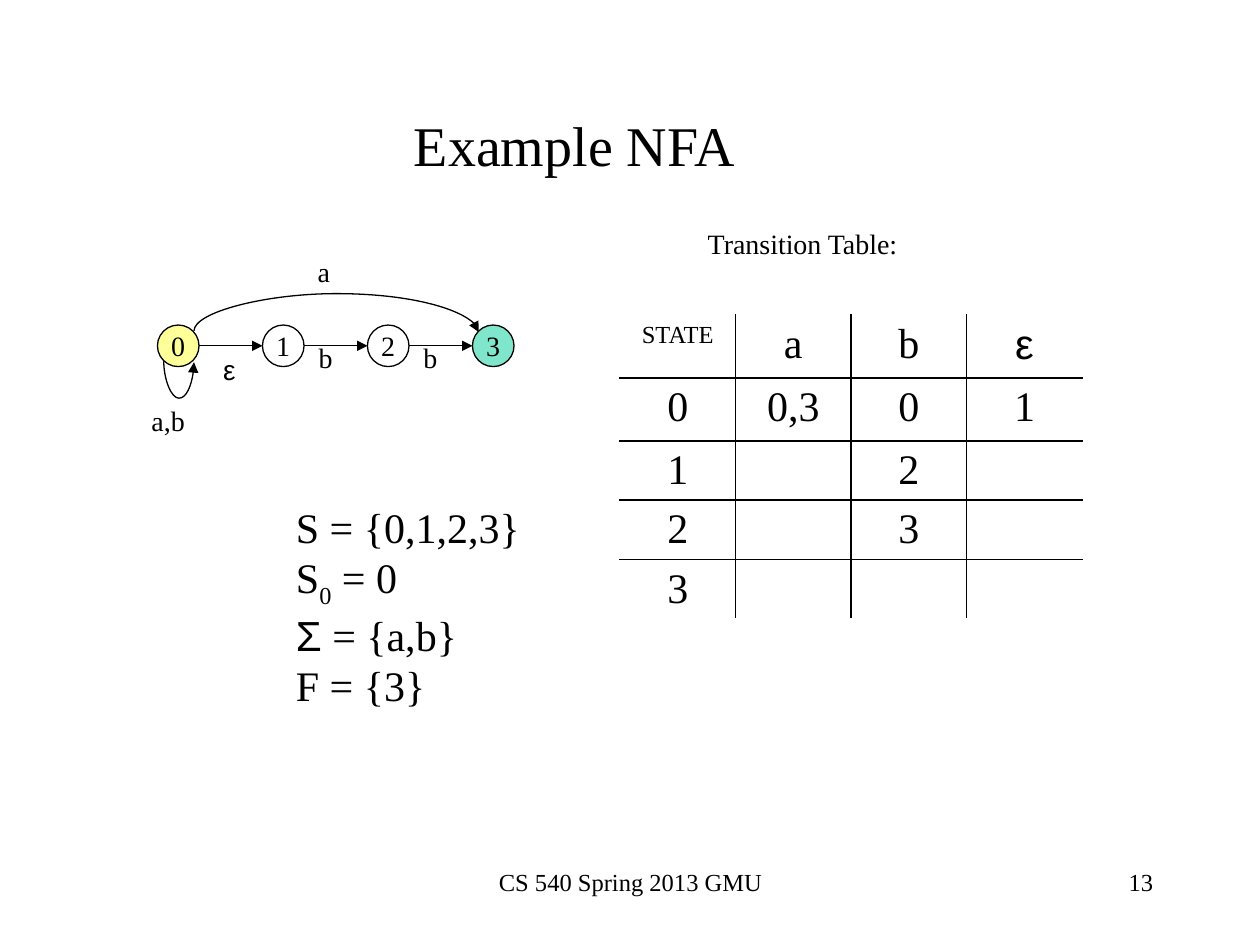
import dataclasses
import typing

import lxml.etree
import pptx
import pptx.dml.color
import pptx.enum.shapes
import pptx.enum.text
import pptx.oxml
import pptx.oxml.ns
import pptx.util

Inches = pptx.util.Inches
Pt = pptx.util.Pt
RGBColor = pptx.dml.color.RGBColor
Align = pptx.enum.text.PP_ALIGN
Anchor = pptx.enum.text.MSO_ANCHOR
Link = pptx.enum.shapes.MSO_CONNECTOR
qn = pptx.oxml.ns.qn

BLACK = RGBColor(0x00, 0x00, 0x00)
WHITE = RGBColor(0xFF, 0xFF, 0xFF)
YELLOW = RGBColor(0xFF, 0xFF, 0x99)
GREEN = RGBColor(0x00, 0xCC, 0x99)
SERIF, SANS = "Times New Roman", "Arial"
GREEK = "εΣ"

# State circles: first left edge, top, size and step
LEFT, TOP, SIZE, STEP = 1.25, 2.58, 0.33, 2.5 / 3


@dataclasses.dataclass
class Label:
    text: str
    left: float
    top: float
    width: float
    height: float = 0.37
    size: int = 16
    align: typing.Any = Align.CENTER
    wrap: bool = False


@dataclasses.dataclass
class Arc:
    start: int
    start_site: int
    end: int
    end_site: int
    mid: float
    y: float
    span: float
    turn: int
    flip: str
    bend: int


LABELS = [
    Label("CS 540 Spring 2013 GMU", 3.42, 6.83, 3.17, 0.5, 14, wrap=True),
    Label("13", 7.17, 6.83, 2.08, 0.5, 14, Align.RIGHT, True),
    Label("Transition Table:", 5.5, 1.75, 1.74),
    Label("a,b", 1.1, 3.15, 0.47),
    Label("a", 2.42, 1.97, 0.3),
    Label("b", 2.43, 2.65, 0.31),
    Label("b", 3.26, 2.65, 0.31),
    Label("ε", 1.67, 2.75, 0.3),
    Label("Example NFA", 3.17, 0.83, 2.78, 0.63, 32),
]
# Loop on state 0, and the arc from 0 to 3
ARCS = [
    Arc(0, 3, 0, 5, 1.42, 2.87, 0.24, 270, "flipH", 30),
    Arc(0, 7, 3, 1, 2.67, 2.63, 2.26, 90, "flipV", -30),
]
ROWS = [
    ["STATE", "a", "b", "ε"],
    ["0", "0,3", "0", "1"],
    ["1", "", "2", ""],
    ["2", "", "3", ""],
    ["3", "", "", ""],
]
HEIGHTS = [0.5, 0.5, 0.47, 0.47, 0.47]


def style(run, size: int) -> None:
    run.font.size = Pt(size)
    run.font.name = SANS if run.text in GREEK else SERIF
    run.font.color.rgb = BLACK


def write(frame, text: str, size: int, align) -> None:
    frame.text = text
    for para in frame.paragraphs:
        para.alignment = align
        for run in para.runs:
            style(run, size)


def add_label(shapes, label: Label) -> None:
    box = shapes.add_textbox(Inches(label.left), Inches(label.top),
                             Inches(label.width), Inches(label.height))
    box.text_frame.word_wrap = label.wrap
    write(box.text_frame, label.text, label.size, label.align)


def add_state(shapes, num: int, fill: RGBColor):
    oval = shapes.add_shape(pptx.enum.shapes.MSO_SHAPE.OVAL,
                            Inches(LEFT + num * STEP), Inches(TOP),
                            Inches(SIZE), Inches(SIZE))
    oval.shadow.inherit = False
    oval.fill.solid()
    oval.fill.fore_color.rgb = fill
    oval.line.color.rgb = BLACK
    oval.line.width = Pt(0.75)
    oval.text_frame.word_wrap = False
    oval.text_frame.vertical_anchor = Anchor.MIDDLE
    write(oval.text_frame, str(num), 16, Align.CENTER)
    return oval


def add_arrow(shapes, kind, start, start_site: int, end, end_site: int):
    line = shapes.add_connector(kind, 0, 0, 0, 0)
    line.begin_connect(start, 0)
    line.end_connect(end, 0)
    # An oval has eight sites, counted from the top by way of the left
    for tag, site in (("a:stCxn", start_site), ("a:endCxn", end_site)):
        for joint in line._element.iter(qn(tag)):
            joint.set("idx", str(site))
    line.begin_x, line.end_x = start.left + start.width, end.left
    line.begin_y = line.end_y = start.top + start.height // 2
    line.line.color.rgb = BLACK
    line.line.width = Pt(0.75)
    props = line._element.spPr
    lxml.etree.SubElement(props.find(qn("a:ln")), qn("a:tailEnd"), type="triangle")
    lxml.etree.SubElement(props, qn("a:effectLst"))
    return line


def add_arc(shapes, states: list, arc: Arc) -> None:
    line = add_arrow(shapes, Link.CURVE, states[arc.start], arc.start_site,
                     states[arc.end], arc.end_site)
    # The frame is a thin upright strip, turned on its side
    thin = 0.01
    line.left, line.top = Inches(arc.mid - thin / 2), Inches(arc.y - arc.span / 2)
    line.width, line.height = Inches(thin), Inches(arc.span)
    props = line._element.spPr
    frame = props.find(qn("a:xfrm"))
    for flip in ("flipH", "flipV"):
        frame.set(flip, "1" if flip == arc.flip else "0")
    frame.set("rot", str(arc.turn * 60000))
    geom = props.find(qn("a:prstGeom"))
    guides = geom.find(qn("a:avLst"))
    if guides is None:
        guides = lxml.etree.SubElement(geom, qn("a:avLst"))
    lxml.etree.SubElement(guides, qn("a:gd"), name="adj1",
                          fmla=f"val {arc.bend * 100000}")


def add_edges(cell, sides: list) -> None:
    props = cell._tc.get_or_add_tcPr()
    for spot, side in enumerate(sides):
        edge = lxml.etree.Element(qn(f"a:{side}"), w=str(int(Pt(1))))
        fill = lxml.etree.SubElement(edge, qn("a:solidFill"))
        lxml.etree.SubElement(fill, qn("a:srgbClr"), val=str(BLACK))
        props.insert(spot, edge)


def add_grid(shapes) -> None:
    count, cols = len(ROWS), len(ROWS[0])
    table = shapes.add_table(count, cols, Inches(4.92), Inches(2.5),
                             Inches(3.67), Inches(sum(HEIGHTS))).table
    table.first_row = table.horz_banding = False
    for row, height in zip(table.rows, HEIGHTS):
        row.height = Inches(height)
    for r, texts in enumerate(ROWS):
        for c, text in enumerate(texts):
            cell = table.cell(r, c)
            cell.fill.background()
            write(cell.text_frame, text, 14 if text == "STATE" else 24, Align.CENTER)
            # Inner rules only
            rules = {"lnL": c > 0, "lnR": c < cols - 1,
                     "lnT": r > 0, "lnB": r < count - 1}
            add_edges(cell, [side for side, shown in rules.items() if shown])


def add_sets(shapes) -> None:
    box = shapes.add_textbox(Inches(2.25), Inches(3.93), Inches(1.98), Inches(1.7))
    frame = box.text_frame
    frame.word_wrap = False
    lines = [["S = {0,1,2,3}"], ["S", "0", " = 0"], ["Σ", " = {a,b}"], ["F = {3}"]]
    for spot, parts in enumerate(lines):
        para = frame.add_paragraph() if spot else frame.paragraphs[0]
        para.alignment = Align.LEFT
        for part in parts:
            run = para.add_run()
            run.text = part
            style(run, 24)
            if part == "0":
                run.font._element.set("baseline", "-25000")


def main() -> None:
    deck = pptx.Presentation()
    deck.slide_width, deck.slide_height = Inches(10), Inches(7.5)
    shapes = deck.slides.add_slide(deck.slide_layouts[6]).shapes
    add_grid(shapes)
    # Automaton, with a half-clear final state
    fills = [YELLOW, WHITE, WHITE, GREEN]
    states = [add_state(shapes, num, fill) for num, fill in enumerate(fills)]
    tint = states[-1]._element.spPr.find(qn("a:solidFill"))[0]
    lxml.etree.SubElement(tint, qn("a:alpha"), val="50000")
    for start, end in zip(states, states[1:]):
        add_arrow(shapes, Link.STRAIGHT, start, 6, end, 2)
    for arc in ARCS:
        add_arc(shapes, states, arc)
    # Text
    for label in LABELS:
        add_label(shapes, label)
    add_sets(shapes)
    deck.save("out.pptx")


if __name__ == "__main__":
    main()
